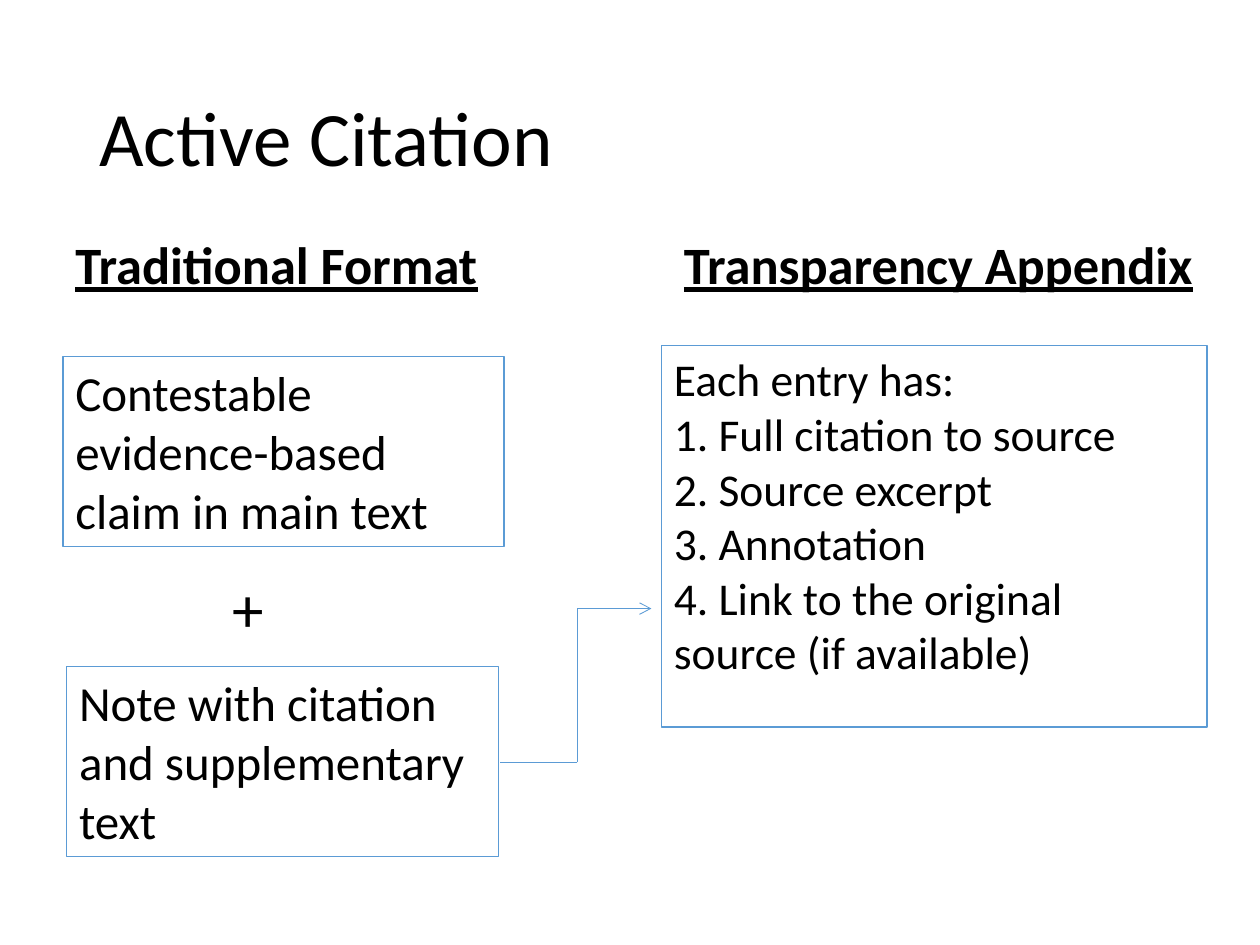
from itertools import pairwise

from lxml.etree import SubElement
from pptx import Presentation
from pptx.dml.color import RGBColor
from pptx.enum.shapes import MSO_CONNECTOR as Connector, MSO_SHAPE as Shape
from pptx.enum.text import MSO_ANCHOR as Anchor, PP_ALIGN as Align
from pptx.oxml.ns import qn
from pptx.util import Inches, Pt

COLORS = {"text": "000000", "line": "5B9BD5"}
FONT = "Calibri"


def color(name):
    return RGBColor.from_string(COLORS[name])


def write(shape, lines, size, anchor=Anchor.TOP, heading=False, spacing=None):
    frame = shape.text_frame
    frame.word_wrap = True
    frame.vertical_anchor = anchor
    frame.text = "\n".join(lines)
    for paragraph in frame.paragraphs:
        paragraph.alignment = Align.LEFT
        paragraph.line_spacing = spacing
        font = paragraph.font
        font.name = FONT
        font.size = Pt(size)
        font.bold = font.underline = heading
        font.color.rgb = color("text")


def add_label(slide, box, text, size, **style):
    label = slide.shapes.add_textbox(*map(Inches, box))
    write(label, [text], size, **style)


def add_panel(slide, box, lines, size):
    panel = slide.shapes.add_shape(Shape.RECTANGLE, *map(Inches, box))
    panel.shadow.inherit = False
    panel.fill.background()
    panel.line.color.rgb = color("line")
    panel.line.width = Pt(0.75)
    write(panel, lines, size)


def add_title(slide, box):
    add_label(slide, box, "Active Citation", 44, anchor=Anchor.MIDDLE, spacing=0.9)


def add_traditional_format(slide, left, top, width):
    panel_height = 1.51
    add_label(slide, (left, top, width, 0.61), "Traditional Format", 30, heading=True)
    add_panel(slide, (left, top + 1.04, 3.5, panel_height),
              ["Contestable evidence-based claim in main text"], 28)
    add_label(slide, (left + 1.25, top + 2.68, 0.58, 0.71), "+", 36)
    add_panel(slide, (left + 0.03, top + 3.5, 3.43, panel_height),
              ["Note with citation and supplementary text"], 28)


def add_transparency_appendix(slide, left, top, width):
    entry_lines = [
        "Each entry has:",
        "1. Full citation to source",
        "2. Source excerpt",
        "3. Annotation",
        "4. Link to the original source (if available)",
    ]
    add_label(slide, (left + 0.08, top, width, 0.61), "Transparency Appendix", 30,
              heading=True)
    add_panel(slide, (left, top + 0.95, width, 3.03), entry_lines, 26)


def add_note_link(slide, left, top, width, height):
    bend, right, bottom = left + 0.61, left + width, top + height
    corners = [(left, bottom), (bend, bottom), (bend, top), (right, top)]
    for start, end in pairwise(corners):
        segment = slide.shapes.add_connector(
            Connector.STRAIGHT, *map(Inches, start + end))
        segment.line.color.rgb = color("line")
        segment.line.width = Pt(0.5)
        properties = segment.element.spPr
        if end == corners[-1]:
            SubElement(properties.find(qn("a:ln")), qn("a:tailEnd"), type="arrow")
        SubElement(properties, qn("a:effectLst"))


def main():
    deck = Presentation()
    deck.slide_width, deck.slide_height = Inches(10), Inches(7.5)
    slide = deck.slides.add_slide(deck.slide_layouts[6])
    column_top = 1.79
    add_title(slide, (0.69, 0.4, 8.62, 1.45))
    add_traditional_format(slide, 0.5, column_top, 3.67)
    add_transparency_appendix(slide, 5.25, column_top, 4.33)
    add_note_link(slide, 3.97, 4.83, 1.2, 1.22)
    deck.save("out.pptx")


if __name__ == "__main__":
    main()
